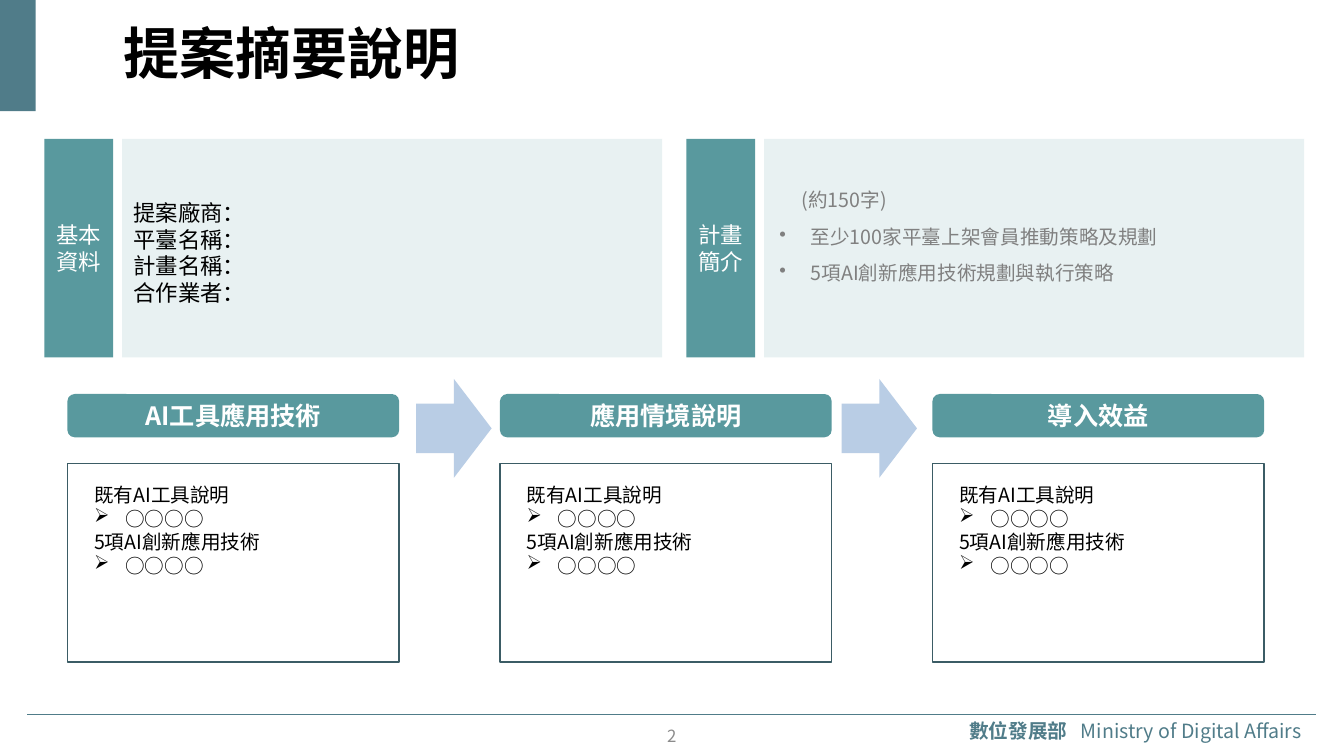
from lxml.etree import SubElement
from pptx import Presentation
from pptx.dml.color import RGBColor
from pptx.enum.shapes import MSO_CONNECTOR, MSO_SHAPE as SHAPE
from pptx.enum.text import MSO_ANCHOR as ANCHOR, PP_ALIGN as ALIGN
from pptx.oxml.ns import qn
from pptx.util import Cm, Pt

FONT = "Noto Sans CJK SC"
COLORS = {
    "slate": "507C89", "teal": "59999E", "mist": "E8F1F2", "outline": "3B5C65",
    "arrow": "B9CDE5", "white": "FFFFFF", "black": "000000", "gray": "808080",
    "number": "8C8C8C",
}

TITLE = "提案摘要說明"
BASIC_FIELDS = ["提案廠商：", "平臺名稱：", "計畫名稱：", "合作業者："]
# A paragraph is a plain string or a dict with text, bullet, left and hang (cm)
SUMMARY = [
    {"text": "(約150字)", "left": 0.74},
    {"text": "至少100家平臺上架會員推動策略及規劃", "bullet": "•", "left": 0.97, "hang": 0.79},
    {"text": "5項AI創新應用技術規劃與執行策略", "bullet": "•", "left": 0.97, "hang": 0.79},
]
PANEL_LABELS = ["基本資料", "計畫簡介"]
CARD_HEADERS = ["AI工具應用技術", "應用情境說明", "導入效益"]
PLACEHOLDER = {"text": "○○○○", "bullet": "➢", "left": 0.79, "hang": 0.79}
CARD_LINES = ["既有AI工具說明", PLACEHOLDER, "5項AI創新應用技術", PLACEHOLDER]
MINISTRY = [("數位發展部\t", True), ("Ministry of Digital Affairs", False)]
PAGE = "2"

# Lengths in cm
PANEL_X, PANEL_PITCH, PANEL_Y, PANEL_H = 1.12, 16.18, 3.5, 5.51
LABEL_W, BODY_DX, BODY_W = 1.73, 1.96, 13.61
CARD_X, CARD_PITCH, CARD_W = 1.7, 10.9, 8.36
HEADER_Y, HEADER_H, CARD_Y, CARD_H = 9.93, 1.09, 11.68, 5.0
ARROW_X, ARROW_PITCH, ARROW_Y, ARROW_W, ARROW_H = 10.49, 10.72, 9.55, 1.9, 2.49
TIGHT = (0.2, 0.1, 0.2, 0.1)
DEFAULT = (0.25, 0.13, 0.25, 0.13)


def rgb(name):
    return RGBColor.from_string(COLORS[name])


def add_run(p, text, size, color, bold=False):
    r = p.add_run()
    r.text = text
    for key, value in {"size": Pt(size), "bold": bold, "name": FONT}.items():
        setattr(r.font, key, value)
    r.font.color.rgb = rgb(color)
    SubElement(r.font._element, qn("a:ea"), typeface=FONT)


def write(sp, paragraphs, size, color, bold=False, align=ALIGN.LEFT,
          anchor=ANCHOR.MIDDLE, insets=TIGHT, spacing=None):
    tf = sp.text_frame
    tf.word_wrap = True
    tf.vertical_anchor = anchor
    for side, value in zip(("left", "top", "right", "bottom"), insets):
        setattr(tf, f"margin_{side}", Cm(value))
    for i, item in enumerate(paragraphs):
        if isinstance(item, str):
            item = {"text": item}
        p = tf.paragraphs[0] if i == 0 else tf.add_paragraph()
        p.alignment = align
        if spacing:
            p.line_spacing = Pt(spacing)
        pPr = p._p.get_or_add_pPr()
        pPr.set("marL", str(Cm(item.get("left", 0))))
        pPr.set("indent", str(-Cm(item.get("hang", 0))))
        if "bullet" in item:
            SubElement(pPr, qn("a:buChar"), char=item["bullet"])
        add_run(p, item["text"], size, color, bold)


def add_box(slide, kind, x, y, w, h, fill=None, line=None):
    sp = slide.shapes.add_shape(kind, Cm(x), Cm(y), Cm(w), Cm(h))
    sp.shadow.inherit = False
    if fill:
        sp.fill.solid()
        sp.fill.fore_color.rgb = rgb(fill)
    else:
        sp.fill.background()
    if line:
        sp.line.color.rgb = rgb(line)
        sp.line.width = Pt(1)
    else:
        sp.line.fill.background()
    return sp


def add_text(slide, x, y, w, h, *args, **formats):
    sp = slide.shapes.add_textbox(Cm(x), Cm(y), Cm(w), Cm(h))
    write(sp, *args, **formats)


def add_frame(slide):
    """Corner block, title, footer rule, ministry name and page number."""
    add_box(slide, SHAPE.RECTANGLE, 0, 0, 0.9, 2.8, "slate")
    add_text(slide, 2.92, 0.08, 30, 2.49, [TITLE], 40, "black", bold=True)

    rule = slide.shapes.add_connector(
        MSO_CONNECTOR.STRAIGHT, Cm(0.69), Cm(18.01), Cm(33.17), Cm(18.01))
    rule.line.color.rgb = rgb("slate")
    rule.line.width = Pt(0.5)
    SubElement(rule._element.spPr, qn("a:effectLst"))

    sp = slide.shapes.add_textbox(Cm(24.23), Cm(18.01), Cm(8.94), Cm(0.81))
    write(sp, [], 14, "slate")
    p = sp.text_frame.paragraphs[0]
    tabs = SubElement(p._p.get_or_add_pPr(), qn("a:tabLst"))
    SubElement(tabs, qn("a:tab"), pos=str(Cm(2.81)), algn="l")
    for text, bold in MINISTRY:
        add_run(p, text, 14, "slate", bold)

    add_text(slide, 14.43, 18.29, 5, 0.51, [PAGE], 12, "number",
             align=ALIGN.CENTER, insets=(0.2, 0, 0.2, 0))


def add_panels(slide):
    bodies = []
    for i, label in enumerate(PANEL_LABELS):
        x = PANEL_X + i * PANEL_PITCH
        bodies.append(add_box(slide, SHAPE.RECTANGLE, x + BODY_DX, PANEL_Y,
                              BODY_W, PANEL_H, "mist"))
        tag = add_box(slide, SHAPE.RECTANGLE, x, PANEL_Y, LABEL_W, PANEL_H, "teal")
        write(tag, [label], 16, "white", align=ALIGN.CENTER)
    add_text(slide, 3.12, 4.88, 12.27, 3, BASIC_FIELDS, 16, "black",
             anchor=ANCHOR.TOP, insets=DEFAULT)
    write(bodies[1], SUMMARY, 14, "gray", insets=(0.2, 0.1, 0.2, 1.02), spacing=26)


def add_cards(slide):
    for i, header in enumerate(CARD_HEADERS):
        x = CARD_X + i * CARD_PITCH
        head = add_box(slide, SHAPE.ROUNDED_RECTANGLE, x, HEADER_Y, CARD_W, HEADER_H, "teal")
        write(head, [header], 18, "white", bold=True, align=ALIGN.CENTER, insets=DEFAULT)
        add_box(slide, SHAPE.RECTANGLE, x, CARD_Y, CARD_W, CARD_H, line="outline")
        add_text(slide, x + 0.42, 12.04, 7.57, 3.84, CARD_LINES, 14, "black",
                 anchor=ANCHOR.TOP, insets=DEFAULT)
    for i in range(len(CARD_HEADERS) - 1):
        add_box(slide, SHAPE.RIGHT_ARROW, ARROW_X + i * ARROW_PITCH, ARROW_Y,
                ARROW_W, ARROW_H, "arrow")


def main():
    prs = Presentation()
    prs.slide_width, prs.slide_height = Cm(33.87), Cm(19.05)
    slide = prs.slides.add_slide(prs.slide_layouts[6])
    add_frame(slide)
    add_panels(slide)
    add_cards(slide)
    prs.save("out.pptx")


if __name__ == "__main__":
    main()
